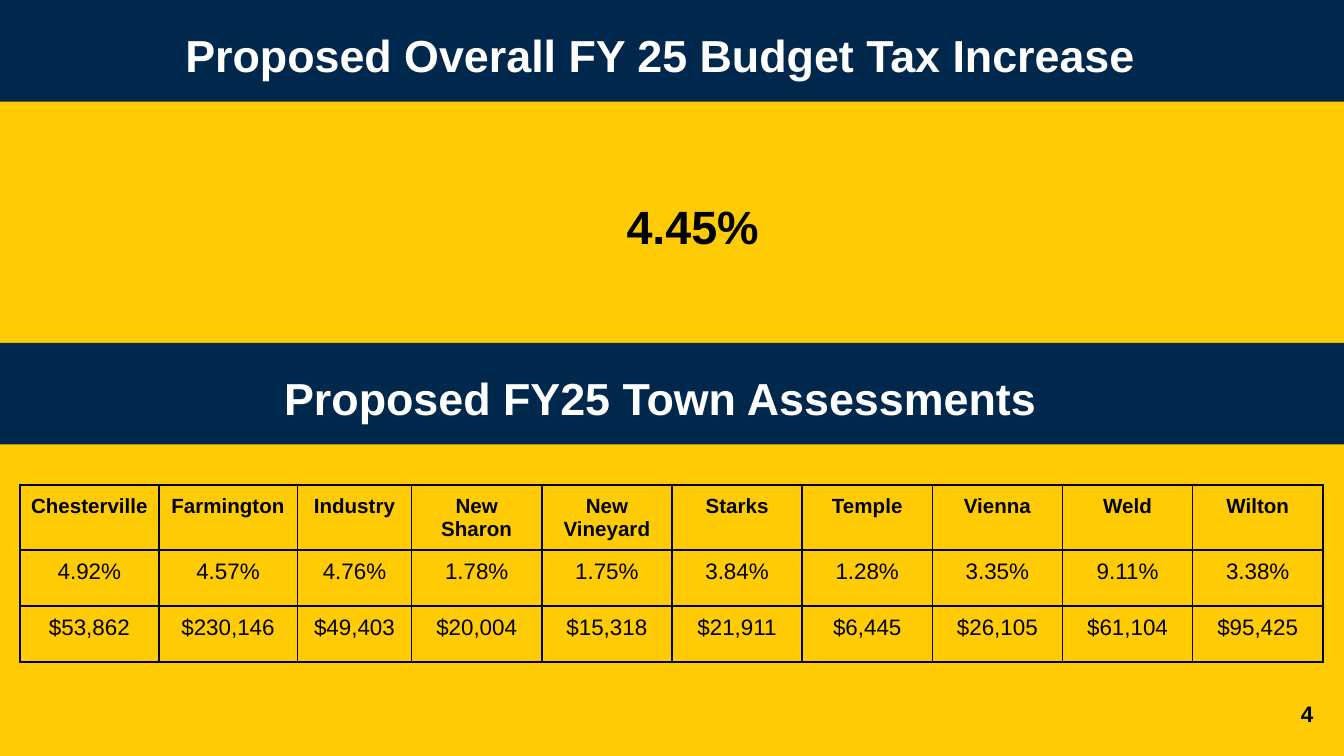
from pptx import Presentation
from pptx.dml.color import RGBColor
from pptx.enum.shapes import MSO_SHAPE
from pptx.enum.text import MSO_ANCHOR, MSO_AUTO_SIZE, PP_ALIGN
from pptx.oxml.ns import qn
from pptx.util import Cm, Pt
from lxml import etree

RECTANGLE = MSO_SHAPE.RECTANGLE
TOP, MIDDLE = MSO_ANCHOR.TOP, MSO_ANCHOR.MIDDLE
FIXED_SIZE = MSO_AUTO_SIZE.NONE
CENTER, RIGHT = PP_ALIGN.CENTER, PP_ALIGN.RIGHT

NAVY, YELLOW, WHITE, BLACK = "00274C", "FFCB05", "FFFFFF", "000000"
FONT = "Arial"
PAGE_WIDTH, PAGE_HEIGHT = 25.4, 14.29
BAND_HEIGHT = 1.92
COLUMN_WIDTHS = [2.62, 2.62, 2.16] + [2.46] * 7
ROW_HEIGHT = 1.06

ASSESSMENTS = [
    ("Chesterville", "4.92%", "$53,862"),
    ("Farmington", "4.57%", "$230,146"),
    ("Industry", "4.76%", "$49,403"),
    ("New Sharon", "1.78%", "$20,004"),
    ("New Vineyard", "1.75%", "$15,318"),
    ("Starks", "3.84%", "$21,911"),
    ("Temple", "1.28%", "$6,445"),
    ("Vienna", "3.35%", "$26,105"),
    ("Weld", "9.11%", "$61,104"),
    ("Wilton", "3.38%", "$95,425"),
]


def color(hex_code):
    return RGBColor.from_string(hex_code)


def place(shape, box):
    shape.left, shape.top, shape.width, shape.height = map(Cm, box)


def write(frame, text, size, hex_code=BLACK, bold=True, align=CENTER):
    """Fill a text frame with one formatted paragraph and return it."""
    frame.text = text
    para = frame.paragraphs[0]
    para.alignment = align
    for span in para.runs:
        span.font.name = FONT
        span.font.size = Pt(size)
        span.font.bold = bold
        span.font.color.rgb = color(hex_code)
    return para


def set_frame(frame, anchor, left=0.25, top=0.25, right=0.25, bottom=0.25):
    frame.word_wrap = True
    frame.auto_size = FIXED_SIZE
    frame.vertical_anchor = anchor
    frame.margin_left, frame.margin_top = Cm(left), Cm(top)
    frame.margin_right, frame.margin_bottom = Cm(right), Cm(bottom)


def format_band(shape, box, heading):
    place(shape, box)
    shape.fill.solid()
    shape.fill.fore_color.rgb = color(NAVY)
    shape.line.fill.background()
    set_frame(shape.text_frame, MIDDLE, right=0.7)
    write(shape.text_frame, heading, 24, WHITE).line_spacing = 1.15


def format_increase(body, box, rate):
    place(body, box)
    set_frame(body.text_frame, TOP, top=1.27, right=0.73)
    para = write(body.text_frame, rate, 25)
    para.line_spacing = 1.15
    para.space_before = Pt(0)
    properties = para._p.get_or_add_pPr()
    properties.set("marL", str(Cm(1.27)))
    properties.set("indent", "0")
    etree.SubElement(properties, qn("a:buNone"))


def add_borders(cell):
    properties = cell._tc.get_or_add_tcPr()
    for side in ("lnL", "lnR", "lnT", "lnB"):
        line = etree.SubElement(properties, qn(f"a:{side}"), w=str(Pt(1)))
        fill = etree.SubElement(line, qn("a:solidFill"))
        etree.SubElement(fill, qn("a:srgbClr"), val=BLACK)


def format_cell(cell, text, is_header):
    add_borders(cell)
    cell.fill.background()
    cell.margin_left = cell.margin_right = Cm(0.18)
    cell.margin_top = cell.margin_bottom = Cm(0.18)
    write(cell.text_frame, text, 11 if is_header else 12, bold=is_header)


def add_assessments(page, left, top):
    rows = list(zip(*ASSESSMENTS))
    box = (left, top, sum(COLUMN_WIDTHS), ROW_HEIGHT * len(rows))
    table = page.shapes.add_table(len(rows), len(ASSESSMENTS), *map(Cm, box)).table
    table.first_row = table.horz_banding = False
    for column, width in zip(table.columns, COLUMN_WIDTHS):
        column.width = Cm(width)
    for row_index, texts in enumerate(rows):
        table.rows[row_index].height = Cm(ROW_HEIGHT)
        for column_index, text in enumerate(texts):
            format_cell(table.cell(row_index, column_index), text, row_index == 0)


def add_page_number(page, box, number):
    frame = page.shapes.add_textbox(*map(Cm, box)).text_frame
    set_frame(frame, MIDDLE)
    write(frame, number, 12, align=RIGHT)


def build_budget_page(deck):
    page = deck.slides.add_slide(deck.slide_layouts[1])
    page.background.fill.solid()
    page.background.fill.fore_color.rgb = color(YELLOW)

    format_band(page.shapes.title, (0, 0, PAGE_WIDTH, BAND_HEIGHT),
                "Proposed Overall FY 25 Budget Tax Increase")
    format_increase(page.placeholders[1], (0.86, 2.31, 23.67, 11.53), "4.45%")
    add_page_number(page, (23.55, 12.95, 1.52, 1.09), "4")
    add_assessments(page, 0.38, 9.17)

    band_box = (0, 6.48, PAGE_WIDTH, BAND_HEIGHT)
    band = page.shapes.add_shape(RECTANGLE, *map(Cm, band_box))
    band.shadow.inherit = False
    format_band(band, band_box, "Proposed FY25 Town Assessments")


def main():
    deck = Presentation()
    deck.slide_width, deck.slide_height = Cm(PAGE_WIDTH), Cm(PAGE_HEIGHT)
    build_budget_page(deck)
    deck.save("out.pptx")


if __name__ == "__main__":
    main()
